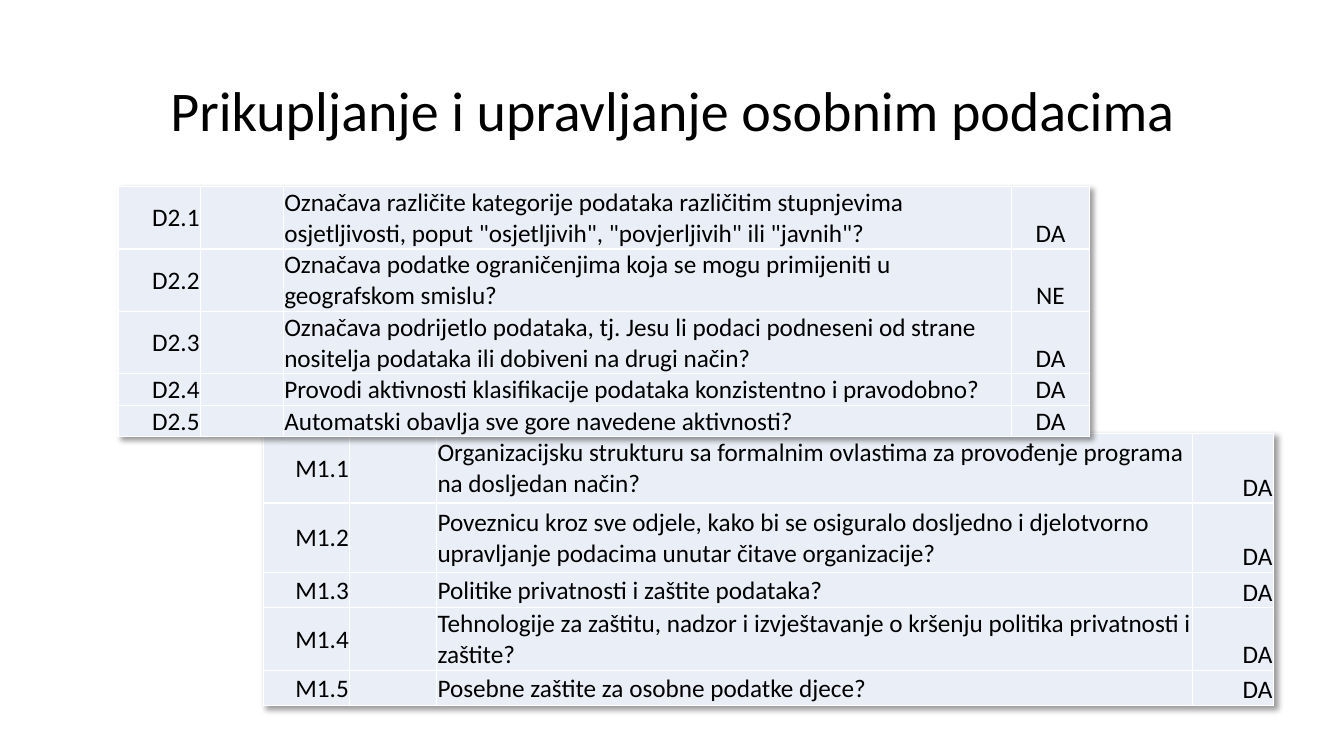
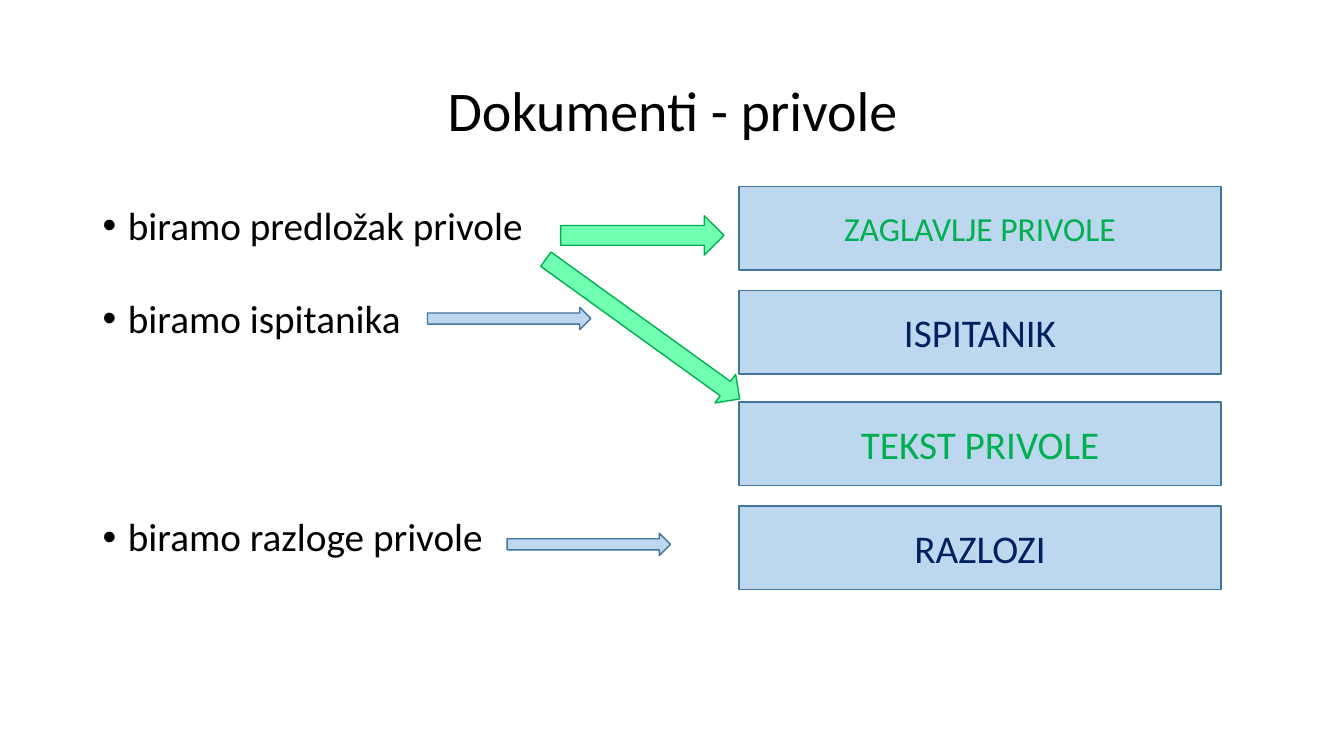
from lxml import etree
from pptx import Presentation
from pptx.dml.color import RGBColor
from pptx.enum.shapes import MSO_SHAPE
from pptx.enum.text import MSO_ANCHOR, PP_ALIGN
from pptx.oxml import parse_xml
from pptx.oxml.ns import nsdecls, qn
from pptx.util import Inches, Pt

RECTANGLE, RIGHT_ARROW = MSO_SHAPE.RECTANGLE, MSO_SHAPE.RIGHT_ARROW
TOP, MIDDLE, BOTTOM = MSO_ANCHOR.TOP, MSO_ANCHOR.MIDDLE, MSO_ANCHOR.BOTTOM
LEFT, CENTER, RIGHT = PP_ALIGN.LEFT, PP_ALIGN.CENTER, PP_ALIGN.RIGHT

FONT = "Calibri"
BLACK, WHITE = "000000", "FFFFFF"
CELL_FILL = "EAEFF7"
NAVY, GREEN = "002060", "00B050"
BLUE_STYLE = ("BDD7EE", "43739E")
GREEN_STYLE = ("71FFB1", GREEN)

DATA_TITLE = "Prikupljanje i upravljanje osobnim podacima"
# Each question: code, wording, answer, row height
PROTECTION = {
    "position": (2.61, 4.3),
    "columns": (0.86, 0.86, 7.5, 0.8),
    "answer_align": RIGHT,
    "questions": [
        ("M1.1", "Organizacijsku strukturu sa formalnim ovlastima za provođenje programa na dosljedan način?", "DA", 0.69),
        ("M1.2", "Poveznicu kroz sve odjele, kako bi se osiguralo dosljedno i djelotvorno upravljanje podacima unutar čitave organizacije?", "DA", 0.69),
        ("M1.3", "Politike privatnosti i zaštite podataka?", "DA", 0.35),
        ("M1.4", "Tehnologije za zaštitu, nadzor i izvještavanje o kršenju politika privatnosti i zaštite?", "DA", 0.62),
        ("M1.5", "Posebne zaštite za osobne podatke djece?", "DA", 0.35),
    ],
}
CLASSIFICATION = {
    "position": (1.17, 1.85),
    "columns": (0.82, 0.82, 7.22, 0.78),
    "answer_align": CENTER,
    "questions": [
        ("D2.1", 'Označava različite kategorije podataka različitim stupnjevima osjetljivosti, poput "osjetljivih", "povjerljivih" ili "javnih"?', "DA", 0.62),
        ("D2.2", "Označava podatke ograničenjima koja se mogu primijeniti u geografskom smislu?", "NE", 0.62),
        ("D2.3", "Označava podrijetlo podataka, tj. Jesu li podaci podneseni od strane nositelja podataka ili dobiveni na drugi način?", "DA", 0.62),
        ("D2.4", "Provodi aktivnosti klasifikacije podataka konzistentno i pravodobno?", "DA", 0.31),
        ("D2.5", "Automatski obavlja sve gore navedene aktivnosti?", "DA", 0.31),
    ],
}

CONSENT_TITLE = "Dokumenti - privole"
# Each part: wording, top, text size, text colour
CONSENT_PARTS = [
    ("ZAGLAVLJE PRIVOLE", 1.85, 24, GREEN),
    ("ISPITANIK", 2.88, 28, NAVY),
    ("TEKST PRIVOLE", 3.99, 28, GREEN),
    ("RAZLOZI", 5.02, 28, NAVY),
]
# Each step: wording, space before in points
STEPS = [
    ("biramo predložak privole", 10),
    ("biramo ispitanika", 24),
    ("biramo razloge privole", 114),
]
# Each arrow: left, top, width, height, rotation, style
ARROWS = [
    (5.56, 2.14, 1.62, 0.39, 0, GREEN_STYLE),
    (4.24, 3.05, 1.62, 0.22, 0, BLUE_STYLE),
    (5.03, 5.29, 1.62, 0.22, 0, BLUE_STYLE),
    (5.19, 3.09, 2.37, 0.35, 35.8, GREEN_STYLE),
]


def rgb(value):
    return RGBColor.from_string(value)


def format_text(paragraph, size, color=BLACK, align=LEFT):
    paragraph.alignment = align
    for run in paragraph.runs:
        run.font.name = FONT
        run.font.size = Pt(size)
        run.font.color.rgb = rgb(color)


def add_text(slide, box, lines, size, align=LEFT, anchor=TOP):
    """Add a wrapped text box with one paragraph per line and return its paragraphs."""
    frame = slide.shapes.add_textbox(*map(Inches, box)).text_frame
    frame.word_wrap = True
    frame.vertical_anchor = anchor
    frame.text = "\n".join(lines)
    for paragraph in frame.paragraphs:
        paragraph.line_spacing = 0.9
        format_text(paragraph, size, align=align)
    return frame.paragraphs


def add_titled_slide(deck, title):
    slide = deck.slides.add_slide(deck.slide_layouts[6])
    add_text(slide, (0.92, 0.4, 11.5, 1.45), [title], 40, CENTER, MIDDLE)
    return slide


def add_bullet(paragraph):
    properties = paragraph._p.get_or_add_pPr()
    properties.set("marL", str(Inches(0.25)))
    properties.set("indent", str(-Inches(0.25)))
    etree.SubElement(properties, qn("a:buFont")).set("typeface", "Arial")
    etree.SubElement(properties, qn("a:buChar")).set("char", "•")


def add_filled_shape(slide, kind, box, style):
    shape = slide.shapes.add_shape(kind, *map(Inches, box))
    fill, line = style
    shape.shadow.inherit = False
    shape.fill.solid()
    shape.fill.fore_color.rgb = rgb(fill)
    shape.line.color.rgb = rgb(line)
    shape.line.width = Pt(1)
    return shape


def add_cell_borders(cell):
    properties = cell._tc.get_or_add_tcPr()
    for index, side in enumerate(("lnL", "lnR", "lnT", "lnB")):
        border = parse_xml(
            f'<a:{side} {nsdecls("a")} w="{Pt(1)}"><a:solidFill>'
            f'<a:srgbClr val="{WHITE}"/></a:solidFill></a:{side}>')
        properties.insert(index, border)


def add_table_shadow(table):
    shadow = parse_xml(
        f'<a:effectLst {nsdecls("a")}><a:outerShdw blurRad="{Pt(4)}" dist="{Pt(3)}" '
        'dir="2700000" algn="tl" rotWithShape="0"><a:srgbClr val="000000">'
        '<a:alpha val="40000"/></a:srgbClr></a:outerShdw></a:effectLst>')
    table._tbl.tblPr.insert(0, shadow)


def fill_cell(cell, text, align, anchor):
    cell.margin_left = cell.margin_right = cell.margin_top = Inches(0.01)
    cell.margin_bottom = 0
    cell.vertical_anchor = anchor
    cell.fill.solid()
    cell.fill.fore_color.rgb = rgb(CELL_FILL)
    add_cell_borders(cell)
    if text:
        cell.text_frame.text = text
        format_text(cell.text_frame.paragraphs[0], 18, align=align)


def add_questionnaire(slide, position, columns, answer_align, questions):
    size = (sum(columns), sum(question[-1] for question in questions))
    table = slide.shapes.add_table(
        len(questions), len(columns), *map(Inches, position + size)).table
    table.first_row = table.horz_banding = False
    add_table_shadow(table)
    for column, width in zip(table.columns, columns):
        column.width = Inches(width)
    aligns = (RIGHT, LEFT, LEFT, answer_align)
    anchors = (MIDDLE, MIDDLE, MIDDLE, BOTTOM)
    for row, (code, wording, answer, height) in zip(table.rows, questions):
        row.height = Inches(height)
        for cell, text, align, anchor in zip(
                row.cells, (code, "", wording, answer), aligns, anchors):
            fill_cell(cell, text, align, anchor)


def build_data_slide(deck):
    slide = add_titled_slide(deck, DATA_TITLE)
    for questionnaire in (PROTECTION, CLASSIFICATION):
        add_questionnaire(slide, **questionnaire)


def build_consent_slide(deck):
    slide = add_titled_slide(deck, CONSENT_TITLE)
    for wording, top, size, color in CONSENT_PARTS:
        part = add_filled_shape(slide, RECTANGLE, (7.33, top, 4.78, 0.83), BLUE_STYLE)
        part.text_frame.text = wording
        part.text_frame.vertical_anchor = MIDDLE
        format_text(part.text_frame.paragraphs[0], size, color, CENTER)

    wordings = [wording for wording, _ in STEPS]
    paragraphs = add_text(slide, (0.92, 2, 6.11, 4.76), wordings, 28)
    for paragraph, (_, space_before) in zip(paragraphs, STEPS):
        paragraph.space_before = Pt(space_before)
        paragraph.space_after = Pt(12)
        add_bullet(paragraph)

    for *box, rotation, style in ARROWS:
        add_filled_shape(slide, RIGHT_ARROW, box, style).rotation = rotation


def main():
    deck = Presentation()
    deck.slide_width, deck.slide_height = Inches(13.33), Inches(7.5)
    build_data_slide(deck)
    build_consent_slide(deck)
    deck.save("out.pptx")


if __name__ == "__main__":
    main()
